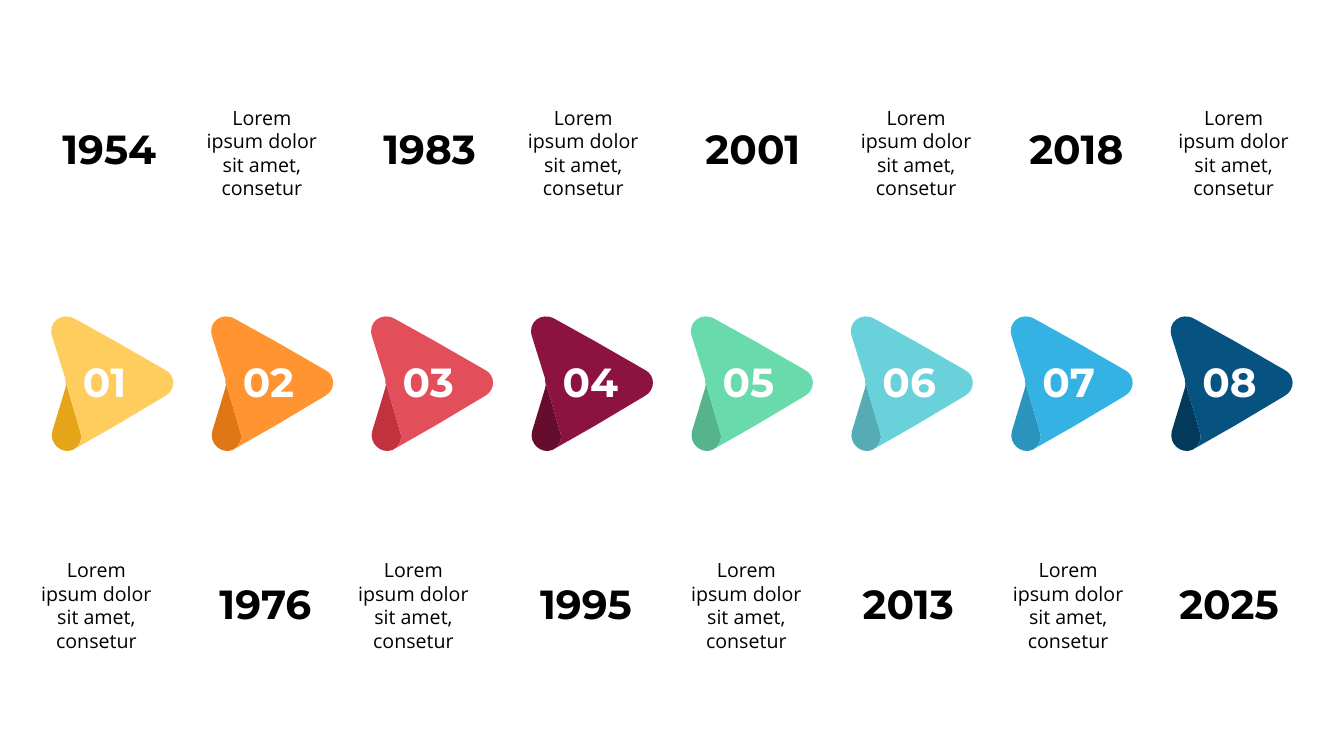
from dataclasses import dataclass

from pptx import Presentation
from pptx.dml.color import RGBColor
from pptx.enum.text import MSO_AUTO_SIZE, PP_ALIGN
from pptx.oxml.ns import qn
from pptx.oxml.xmlchemy import OxmlElement
from pptx.util import Cm, Pt

LEFT, CENTER = PP_ALIGN.LEFT, PP_ALIGN.CENTER
GROW = MSO_AUTO_SIZE.SHAPE_TO_FIT_TEXT
BLANK_LAYOUT = 6


@dataclass(frozen=True)
class Theme:
    ink: str = "000000"
    light: str = "FFFFFF"
    heading_font: str = "Montserrat"
    body_font: str = "Open Sans"
    heading_size: int = 29
    body_size: int = 14


# Arrow outlines in cm: one point is a line, three points are a Bézier curve
FOLD_START = (0.84, 3.05)
HEAD_START = (0.64, 3.49)
FOLD = [
    [(0.46, 1.75)],
    [(0.48, 1.8), (0.48, 1.88), (0.46, 1.93)],
    [(0.13, 3.02)],
    [(0.05, 3.33), (0.36, 3.6), HEAD_START],
    [(0.79, 3.43), (0.91, 3.23), FOLD_START],
]
HEAD = [
    [(0.66, 3.48), (0.69, 3.47), (0.71, 3.45)],
    [(1.73, 2.87)],
    [(2.97, 2.13)],
    [(3.25, 1.98), (3.24, 1.6), (2.97, 1.47)],
    [(1.7, 0.74)],
    [(0.69, 0.18)],
    [(0.36, 0), (0, 0.28), (0.13, 0.64)],
    [(0.46, 1.7)],
    [(0.46, 1.72), (0.46, 1.73), (0.46, 1.75)],
    [FOLD_START],
    [(0.91, 3.23), (0.79, 3.43), HEAD_START],
]

# Year, its left and width, left of text, head colour, fold colour
MILESTONES = [
    ("1954", 1.57, 2.87, 0.73, "FFCC5E", "E6A519"),
    ("1976", 5.53, 2.9, 4.9, "FF9430", "E07714"),
    ("1983", 9.66, 2.92, 8.72, "E24E5A", "C2323E"),
    ("1995", 13.61, 2.92, 13, "8C133F", "660D2D"),
    ("2001", 17.78, 3.05, 17.11, "69DAAB", "55B48C"),
    ("2013", 21.74, 2.95, 21.39, "69D1DA", "55ACB4"),
    ("2018", 25.94, 3, 25.22, "34B2E3", "2A94BD"),
    ("2025", 29.72, 3.15, 29.39, "065280", "03395A"),
]
BODY_TEXT = "Lorem ipsum dolor sit amet, consetur"
ARROW_LEFT, ARROW_TOP, ARROW_PITCH = 1.19, 7.85, 4.03
NUMBER_LEFT, NUMBER_TOP, NUMBER_WIDTH = 2.09, 8.99, 1.92
YEAR_TOPS = (3.12, 14.58)
BODY_TOPS = (13.94, 2.54)


class TimelineSlide:
    def __init__(self, deck, theme):
        self.theme = theme
        self.page = deck.slides.add_slide(deck.slide_layouts[BLANK_LAYOUT])

    def outline(self, left, top, start, steps, color):
        points = [start] + [point for step in steps for point in step]
        spots = [(Cm(left + x), Cm(top + y)) for x, y in points]
        builder = self.page.shapes.build_freeform(*spots[0])
        builder.add_line_segments(spots[1:], close=True)
        shape = builder.convert_to_shape()
        # Join the three points of each curve into one Bézier segment
        segments = iter(list(shape.element.iter(qn("a:lnTo"))))
        for step in steps:
            lines = [next(segments) for _ in step]
            if len(lines) == 3:
                curve = OxmlElement("a:cubicBezTo")
                lines[0].addprevious(curve)
                for line in lines:
                    curve.append(line[0])
                    line.getparent().remove(line)
        shape.shadow.inherit = False
        shape.fill.solid()
        shape.fill.fore_color.rgb = RGBColor.from_string(color)
        shape.line.fill.background()

    def text(self, words, place, frame_format, font_format, color, align):
        box = self.page.shapes.add_textbox(*(Cm(length) for length in place))
        frame = box.text_frame
        for name, value in frame_format.items():
            setattr(frame, name, value)
        para = frame.paragraphs[0]
        para.alignment = align
        span = para.add_run()
        span.text = words
        for name, value in font_format.items():
            setattr(span.font, name, value)
        span.font.color.rgb = RGBColor.from_string(color)

    def heading(self, words, left, top, width, color):
        frame_format = {"word_wrap": False, "auto_size": GROW, "margin_left": 0,
                        "margin_top": 0, "margin_right": 0, "margin_bottom": 0}
        font_format = {"name": self.theme.heading_font, "size": Pt(self.theme.heading_size),
                       "bold": True}
        self.text(words, (left, top, width, 1.5), frame_format, font_format, color, LEFT)

    def body(self, words, left, top):
        frame_format = {"word_wrap": True, "auto_size": GROW}
        font_format = {"name": self.theme.body_font, "size": Pt(self.theme.body_size)}
        self.text(words, (left, top, 3.4, 2.64), frame_format, font_format,
                  self.theme.ink, CENTER)


def main():
    deck = Presentation()
    deck.slide_width, deck.slide_height = Cm(33.87), Cm(19.05)
    theme = Theme()
    timeline = TimelineSlide(deck, theme)

    for index, milestone in enumerate(MILESTONES):
        year, year_left, year_width, body_left, head_color, fold_color = milestone
        shift = index * ARROW_PITCH
        # Numbered arrow
        timeline.outline(ARROW_LEFT + shift, ARROW_TOP, FOLD_START, FOLD, fold_color)
        timeline.outline(ARROW_LEFT + shift, ARROW_TOP, HEAD_START, HEAD, head_color)
        timeline.heading(f"{index + 1:02}", NUMBER_LEFT + shift, NUMBER_TOP,
                         NUMBER_WIDTH, theme.light)
        # Year and text swap sides from one milestone to the next
        timeline.heading(year, year_left, YEAR_TOPS[index % 2], year_width, theme.ink)
        timeline.body(BODY_TEXT, body_left, BODY_TOPS[index % 2])

    deck.save("out.pptx")


if __name__ == "__main__":
    main()
